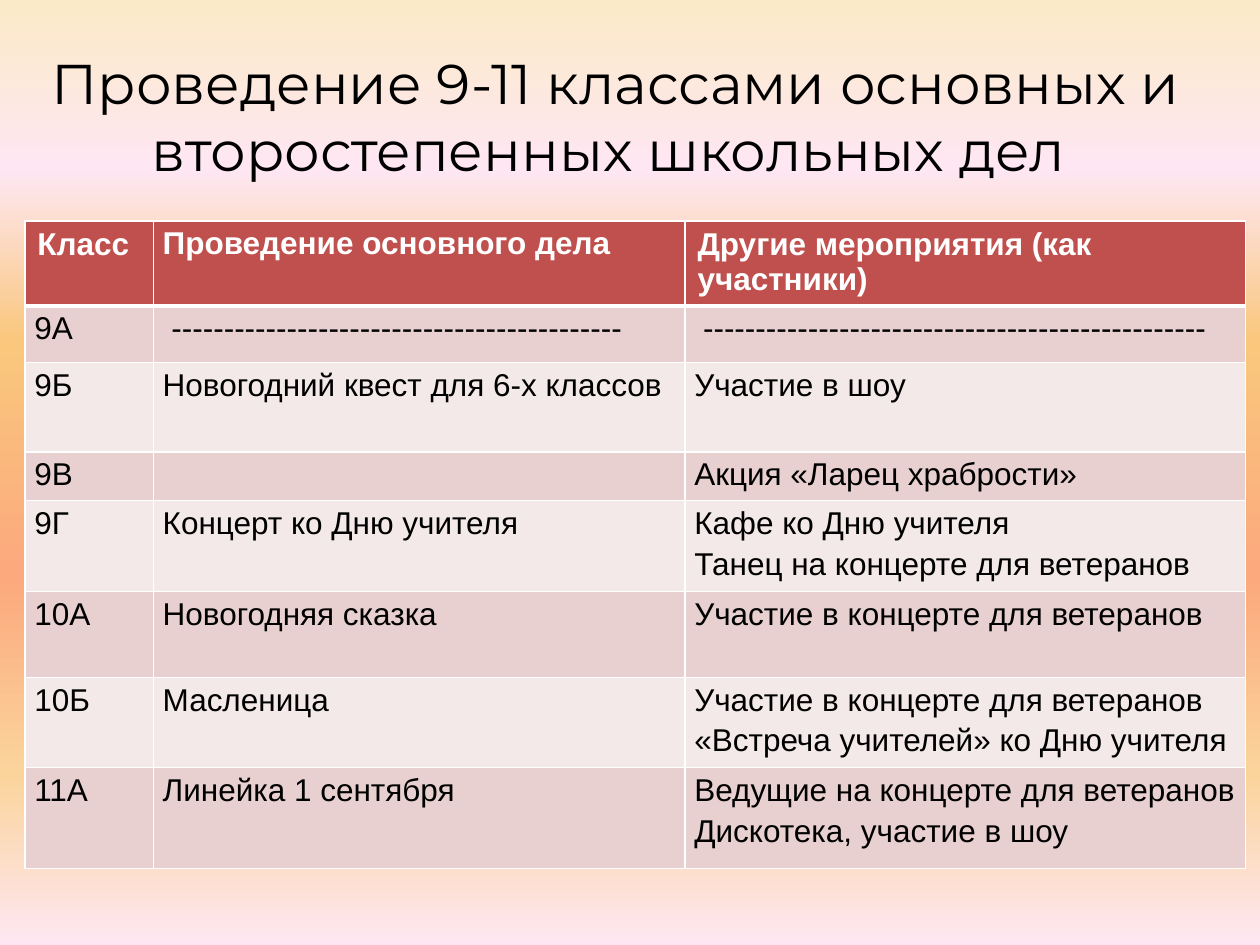
from dataclasses import dataclass

import lxml.etree
import pptx
import pptx.dml.color
import pptx.enum.text
import pptx.oxml.ns
import pptx.util

Pt = pptx.util.Pt
RGBColor = pptx.dml.color.RGBColor
qn = pptx.oxml.ns.qn

WHITE = RGBColor(0xFF, 0xFF, 0xFF)
BLACK = RGBColor(0x00, 0x00, 0x00)
HEADER_RED = RGBColor(0xC0, 0x50, 0x4D)
BANDS = (RGBColor(0xE8, 0xD0, 0xD0), RGBColor(0xF4, 0xE9, 0xE9))
CREAM = RGBColor(0xFB, 0xEA, 0xC7)
PINK = RGBColor(0xFE, 0xE7, 0xF2)
AMBER = RGBColor(0xFA, 0xC7, 0x7D)
CORAL = RGBColor(0xFB, 0xA9, 0x7D)
SAND = RGBColor(0xFB, 0xD4, 0x9C)
BACKGROUND_STOPS = ((0, CREAM), (18, PINK), (36, AMBER), (61, CORAL), (82, SAND), (100, PINK))

TITLE = "Проведение 9-11 классами основных и второстепенных школьных дел "
COLUMN_WIDTHS = (73.4, 303.8, 320.4)
HEADER_HEIGHT = 48.6
HEADERS = ("Класс", "Проведение основного дела", "Другие мероприятия (как участники)")


@dataclass
class ClassRow:
    height: float
    name: str
    main_event: str
    other_events: str


CLASS_ROWS = (
    ClassRow(32.5, "9А", " " + "-" * 43, " " + "-" * 48),
    ClassRow(50.9, "9Б", "Новогодний квест для 6-х классов", "Участие в шоу"),
    ClassRow(28, "9В", "", "Акция «Ларец храбрости»"),
    ClassRow(52, "9Г", "Концерт ко Дню учителя", "Кафе ко Дню учителя\nТанец на концерте для ветеранов"),
    ClassRow(49.1, "10А", "Новогодняя сказка", "Участие в концерте для ветеранов"),
    ClassRow(51.5, "10Б", "Масленица",
             "Участие в концерте для ветеранов\n«Встреча учителей» ко Дню учителя"),
    ClassRow(57.7, "11А", "Линейка 1 сентября",
             "Ведущие на концерте для ветеранов\nДискотека, участие в шоу"),
)


def paint_background(page) -> None:
    fill = page.background.fill
    fill.gradient()
    fill.gradient_angle = 270
    stops = page.background._cSld.find(".//" + qn("a:gsLst"))
    for stop in list(stops):
        stops.remove(stop)
    for percent, color in BACKGROUND_STOPS:
        stop = lxml.etree.SubElement(stops, qn("a:gs"), pos=str(percent * 1000))
        lxml.etree.SubElement(stop, qn("a:srgbClr"), val=str(color))


def set_borders(cell, bottom: float, top: float) -> None:
    properties = cell._tc.get_or_add_tcPr()
    widths = (("a:lnL", 1), ("a:lnR", 1), ("a:lnT", top), ("a:lnB", bottom))
    for position, (tag, width) in enumerate(widths):
        line = lxml.etree.Element(qn(tag), w=str(Pt(width)))
        solid = lxml.etree.SubElement(line, qn("a:solidFill"))
        lxml.etree.SubElement(solid, qn("a:srgbClr"), val=str(WHITE))
        properties.insert(position, line)


def format_text(frame, font_name: str, size: float, color: RGBColor, bold: bool = False) -> None:
    for paragraph in frame.paragraphs:
        for span in paragraph.runs:
            span.font.name = font_name
            span.font.size = Pt(size)
            span.font.color.rgb = color
            span.font.bold = bold


def fill_cell(cell, text: str, row: int, tight: bool) -> None:
    header = row == 0
    cell.text_frame.text = text
    cell.fill.solid()
    cell.fill.fore_color.rgb = HEADER_RED if header else BANDS[(row - 1) % 2]
    set_borders(cell, bottom=3 if header else 1, top=3 if row == 1 else 1)
    format_text(cell.text_frame, "Arial", 18, WHITE if header else BLACK, header)
    if tight:
        cell.margin_left = cell.margin_right = Pt(5.4)
        cell.margin_top = cell.margin_bottom = Pt(0)
        for paragraph in cell.text_frame.paragraphs:
            paragraph.line_spacing = 1.15


def add_title(page) -> None:
    box = page.shapes.title
    box.left, box.top, box.width, box.height = Pt(20), Pt(21), Pt(664), Pt(90)
    frame = box.text_frame
    frame.text = TITLE
    frame.auto_size = pptx.enum.text.MSO_AUTO_SIZE.NONE
    frame.vertical_anchor = pptx.enum.text.MSO_ANCHOR.MIDDLE
    frame.paragraphs[0].alignment = pptx.enum.text.PP_ALIGN.CENTER
    format_text(frame, "Montserrat", 32, BLACK)


def add_events_table(page) -> None:
    heights = [HEADER_HEIGHT] + [entry.height for entry in CLASS_ROWS]
    table = page.shapes.add_table(
        len(heights), len(COLUMN_WIDTHS), Pt(14.2), Pt(126.2),
        Pt(sum(COLUMN_WIDTHS)), Pt(sum(heights))).table
    for column, width in zip(table.columns, COLUMN_WIDTHS):
        column.width = Pt(width)
    for row, height in zip(table.rows, heights):
        row.height = Pt(height)
    # Header row: only the middle cell is tightly spaced
    for column, text in enumerate(HEADERS):
        fill_cell(table.cell(0, column), text, 0, tight=column == 1)
    # One row for each class
    for row, entry in enumerate(CLASS_ROWS, start=1):
        for column, text in enumerate((entry.name, entry.main_event, entry.other_events)):
            fill_cell(table.cell(row, column), text, row, tight=True)


def main() -> None:
    deck = pptx.Presentation()
    deck.slide_width, deck.slide_height = Pt(720), Pt(540)
    page = deck.slides.add_slide(deck.slide_layouts[5])
    paint_background(page)
    add_title(page)
    add_events_table(page)
    deck.save("out.pptx")


if __name__ == "__main__":
    main()
